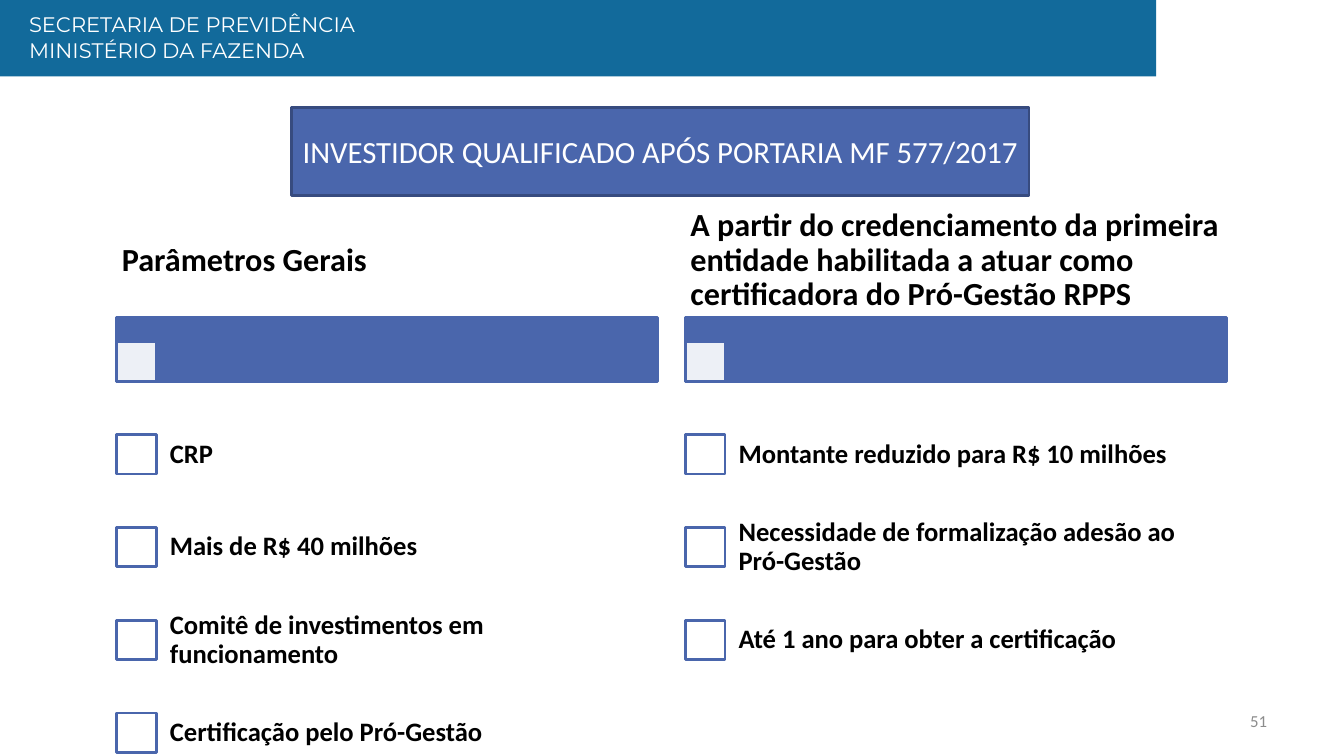
from dataclasses import dataclass

from lxml import etree
from pptx import Presentation
from pptx.dml.color import RGBColor
from pptx.enum import shapes, text
from pptx.oxml import ns
from pptx.util import Pt


@dataclass(frozen=True)
class Theme:
    header: str = "126A9B"
    accent: str = "4A66AC"
    accent_dark: str = "374B7F"
    white: str = "FFFFFF"
    black: str = "000000"
    grey: str = "8C8C8C"
    body_font: str = "Calibri"
    header_font: str = "Montserrat"
    header_size: float = 15
    title_size: float = 22
    heading_size: float = 23
    item_size: float = 19
    number_size: float = 12
    line_width: float = 2


class SlideBuilder:
    def __init__(self, page, theme):
        self.page = page
        self.theme = theme

    def rectangle(self, left, top, width, height, fill, line=None, opacity=None):
        box = self.page.shapes.add_shape(
            shapes.MSO_SHAPE.RECTANGLE, Pt(left), Pt(top), Pt(width), Pt(height))
        box.shadow.inherit = False
        box.fill.solid()
        box.fill.fore_color.rgb = RGBColor.from_string(fill)
        if line:
            box.line.color.rgb = RGBColor.from_string(line)
            box.line.width = Pt(self.theme.line_width)
        else:
            box.line.fill.background()
        if opacity is not None:
            color = box.element.spPr.find(ns.qn("a:solidFill")).find(ns.qn("a:srgbClr"))
            etree.SubElement(color, ns.qn("a:alpha"), val=str(opacity * 1000))
        return box

    def set_text(self, box, lines, size, color, font=None, bold=False,
                 align=text.PP_ALIGN.LEFT, anchor=text.MSO_ANCHOR.MIDDLE,
                 margins=(7.2, 3.6), spacing=1.0):
        frame = box.text_frame
        frame.word_wrap = True
        frame.vertical_anchor = anchor
        frame.margin_left = frame.margin_right = Pt(margins[0])
        frame.margin_top = frame.margin_bottom = Pt(margins[1])
        for index, line in enumerate(lines):
            para = frame.add_paragraph() if index else frame.paragraphs[0]
            para.text = line
            para.alignment = align
            para.line_spacing = spacing
            para.font.name = font or self.theme.body_font
            para.font.size = Pt(size)
            para.font.bold = bold
            para.font.color.rgb = RGBColor.from_string(color)

    def label(self, left, top, width, height, lines, size, color, **style):
        box = self.page.shapes.add_textbox(Pt(left), Pt(top), Pt(width), Pt(height))
        self.set_text(box, lines, size, color, **style)

    def checklist(self, left, heading, items):
        theme = self.theme
        width, square, row = 386.6, 28.3, 66.3
        # Heading bar with its translucent corner square
        self.rectangle(left, 226.8, width, 45.5, theme.accent, theme.accent)
        self.rectangle(left, 244, square, square, theme.white, theme.accent, opacity=90)
        self.label(left, 145.2, width, 82, [heading], theme.heading_size, theme.black,
                   bold=True, margins=(3.6, 2.2), spacing=0.9)
        # Check boxes with their items
        for index, item in enumerate(items):
            top = 291.4 + index * row
            self.rectangle(left, top + (row - square) / 2, square, square,
                           theme.white, theme.accent)
            self.label(left + 27.2, top, 360, row, [item], theme.item_size, theme.black,
                       bold=True, margins=(10.8, 10.8), spacing=0.9)


CHECKLISTS = [
    ("Parâmetros Gerais",
     ["CRP", "Mais de R$ 40 milhões", "Comitê de investimentos em funcionamento",
      "Certificação pelo Pró-Gestão"]),
    ("A partir do credenciamento da primeira entidade habilitada a atuar como "
     "certificadora do Pró-Gestão RPPS",
     ["Montante reduzido para R$ 10 milhões",
      "Necessidade de formalização adesão ao Pró-Gestão",
      "Até 1 ano para obter a certificação"]),
]


def main():
    deck = Presentation()
    deck.slide_width, deck.slide_height = Pt(960), Pt(540)
    theme = Theme()
    builder = SlideBuilder(deck.slides.add_slide(deck.slide_layouts[6]), theme)

    # Header band
    builder.rectangle(-0.7, -0.7, 826.6, 55.4, theme.header)
    builder.label(13.7, 5, 551.5, 44, ["SECRETARIA DE PREVIDÊNCIA", "MINISTÉRIO DA FAZENDA"],
                  theme.header_size, theme.white, font=theme.header_font,
                  anchor=text.MSO_ANCHOR.TOP)

    # Slide number
    builder.label(688.3, 500.4, 223.9, 28.8, ["51"], theme.number_size, theme.grey,
                  align=text.PP_ALIGN.RIGHT)

    # Title box
    title = builder.rectangle(208.1, 77, 527, 62.6, theme.accent, theme.accent_dark)
    builder.set_text(title, ["INVESTIDOR QUALIFICADO APÓS PORTARIA MF 577/2017"],
                     theme.title_size, theme.white, align=text.PP_ALIGN.CENTER)

    # Two checklist columns
    for column, (heading, items) in enumerate(CHECKLISTS):
        builder.checklist(83.4 + column * 406.2, heading, items)

    deck.save("out.pptx")


if __name__ == "__main__":
    main()
